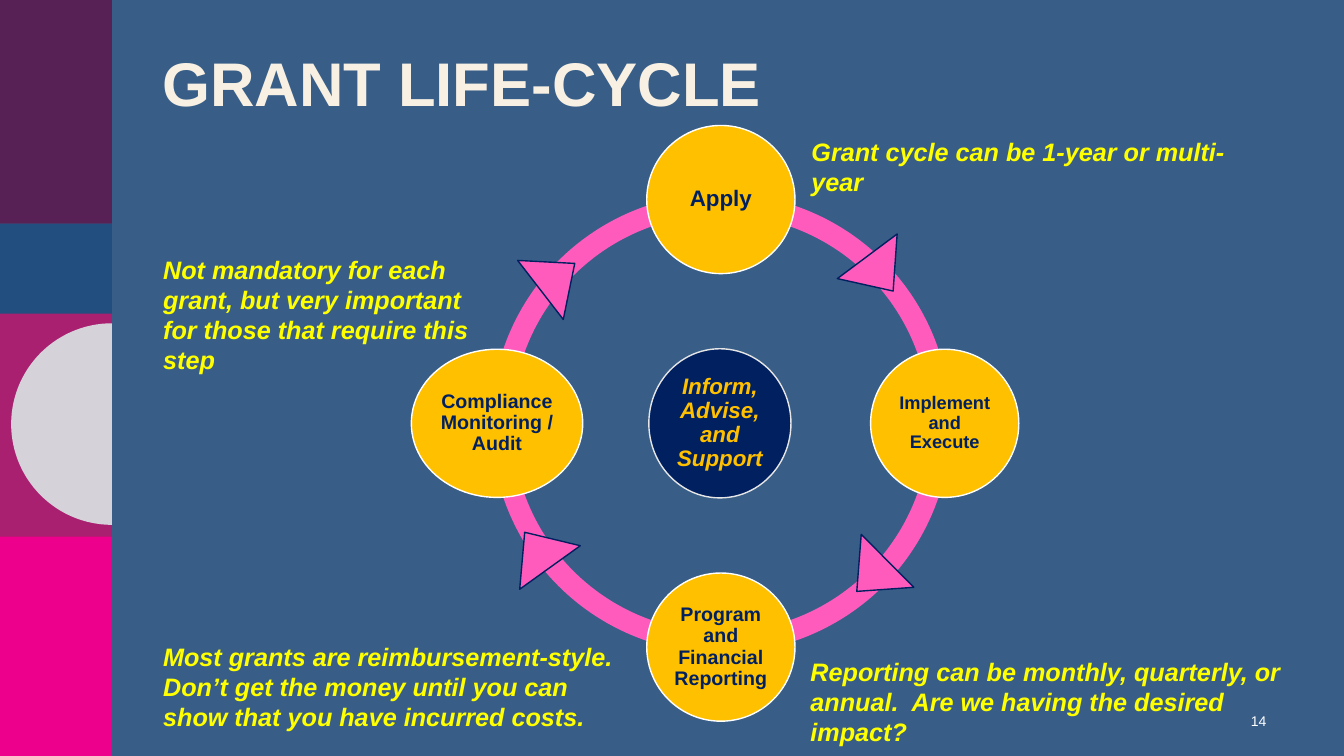
import math

from pptx import Presentation, util as u
from pptx.dml.color import RGBColor
from pptx.enum import shapes, text

SLATE = RGBColor(0x38, 0x5E, 0x88)
MAGENTA = RGBColor(0xEC, 0x00, 0x8C)
BERRY = RGBColor(0xAA, 0x20, 0x70)
PLUM = RGBColor(0x58, 0x21, 0x56)
BLUE = RGBColor(0x22, 0x4E, 0x7F)
SILVER = RGBColor(0xD5, 0xD2, 0xDA)
CREAM = RGBColor(0xF8, 0xF0, 0xE3)
PINK = RGBColor(0xFF, 0x5B, 0xBC)
NAVY = RGBColor(0x00, 0x20, 0x60)
GOLD = RGBColor(0xFF, 0xC0, 0x00)
PALE = RGBColor(0xE7, 0xE6, 0xE6)
WHITE = RGBColor(0xFF, 0xFF, 0xFF)
YELLOW = RGBColor(0xFF, 0xFF, 0x00)

WIDTH, HEIGHT = 13.33, 7.5
SIDEBAR = (0, 0, WIDTH / 12, HEIGHT)
RING = (4.87, 1.92, 4.56, 4.56)
NODE_ORBIT = 2.22
NODE_HEIGHT = 1.47
QUARTER_TURN = 54

STAGES = [
    ("Apply", 16, 1.47),
    ("Implement and Execute", 13, 1.47),
    ("Program and Financial Reporting", 14, 1.47),
    ("Compliance Monitoring / Audit", 14, 1.7),
]
ARROWS = [
    (8.36, 2.5, 143.3),
    (8.28, 5.5, 225.2),
    (4.96, 5.24, 324.3),
    (5.16, 2.53, 52.3),
]
NOTES = [
    ((7.95, 1.3, 4.73, 0.4), "Grant cycle can be 1-year or multi-year"),
    ((7.94, 6.46, 5.16, 0.71),
     "Reporting can be monthly, quarterly, or annual.  Are we having the desired impact?"),
    ((1.52, 6.31, 4.73, 1.01),
     "Most grants are reimbursement-style.  Don’t get the money until you can "
     "show that you have incurred costs."),
    ((1.52, 2.47, 3.23, 1.31),
     "Not mandatory for each grant, but very important for those that require this step"),
]


def inches(box):
    """Convert a box in inches to lengths."""
    return [u.Inches(length) for length in box]


def paint(shape, fill, line=None):
    """Give a shape a flat fill and an optional thin outline."""
    shape.shadow.inherit = False
    shape.fill.solid()
    shape.fill.fore_color.rgb = fill
    if line is None:
        shape.line.fill.background()
    else:
        shape.line.color.rgb = line
        shape.line.width = u.Pt(1)


def add_shape(page, kind, box, fill, line=None):
    """Add a painted preset shape."""
    shape = page.shapes.add_shape(kind, *inches(box))
    paint(shape, fill, line)
    return shape


def write(shape, words, size, color, bold=True, italic=False,
          align=text.PP_ALIGN.LEFT, spacing=1.0):
    """Put one formatted paragraph into a shape."""
    frame = shape.text_frame
    frame.word_wrap = True
    frame.text = words
    para = frame.paragraphs[0]
    para.alignment = align
    para.line_spacing = spacing
    for span in para.runs:
        span.font.name = "Arial"
        span.font.size = u.Pt(size)
        span.font.bold = bold
        span.font.italic = italic
        span.font.color.rgb = color
    return frame


def add_sidebar(page, box):
    """Stack the colour blocks and set a half disc against their right edge."""
    left, top, width, height = box
    bands = [(0.704, 0.296, MAGENTA), (0.414, 0.296, BERRY),
             (0, 0.296, PLUM), (0.296, 0.119, BLUE)]
    for start, share, color in bands:
        band = (left, top + start * height, width, share * height)
        add_shape(page, shapes.MSO_SHAPE.RECTANGLE, band, color)

    edge, middle, radius = left + width, top + 0.561 * height, 1
    angles = [math.radians(90 + 3 * step) for step in range(61)]
    points = [(u.Inches(edge + radius * math.cos(angle)),
               u.Inches(middle - radius * math.sin(angle))) for angle in angles]
    builder = page.shapes.build_freeform(*points[0])
    builder.add_line_segments(points[1:], close=True)
    paint(builder.convert_to_shape(), SILVER)


def add_title(page, box):
    """Place the title placeholder."""
    title = page.shapes.title
    title.left, title.top, title.width, title.height = inches(box)
    frame = write(title, "GRANT LIFE-CYCLE", 44, CREAM, spacing=0.9)
    frame.vertical_anchor = text.MSO_ANCHOR.TOP
    frame.auto_size = text.MSO_AUTO_SIZE.NONE


def add_disc(page, center, size, fill, line, words, points, color, italic=False):
    """Add a labelled ellipse around a centre point."""
    (x, y), (width, height) = center, size
    box = (x - width / 2, y - height / 2, width, height)
    disc = add_shape(page, shapes.MSO_SHAPE.OVAL, box, fill, line)
    frame = write(disc, words, points, color, italic=italic,
                  align=text.PP_ALIGN.CENTER, spacing=0.9)
    frame.vertical_anchor = text.MSO_ANCHOR.MIDDLE
    frame.margin_left = frame.margin_right = u.Inches(0.02)
    frame.margin_top = frame.margin_bottom = u.Inches(0.02)


def add_cycle(page, box):
    """Draw the ring, its hub, the four stages and the direction arrows."""
    left, top, width, height = box
    x, y = left + width / 2, top + height / 2
    for quarter in range(4):
        arc = add_shape(page, shapes.MSO_SHAPE.BLOCK_ARC, box, PINK)
        arc.adjustments[0] = quarter * QUARTER_TURN
        arc.adjustments[1] = (quarter + 1) % 4 * QUARTER_TURN
        arc.adjustments[2] = 0.046

    add_disc(page, (x - 0.01, y), (1.41, 1.48), NAVY, PALE,
             "Inform, Advise, and Support", 16, GOLD, italic=True)
    for order, (words, points, node_width) in enumerate(STAGES):
        angle = order * math.pi / 2
        center = (x + NODE_ORBIT * math.sin(angle), y - NODE_ORBIT * math.cos(angle))
        add_disc(page, center, (node_width, NODE_HEIGHT), GOLD, WHITE,
                 words, points, NAVY)

    for arrow_left, arrow_top, turn in ARROWS:
        arrow = add_shape(page, shapes.MSO_SHAPE.ISOSCELES_TRIANGLE,
                          (arrow_left, arrow_top, 0.74, 0.43), PINK, NAVY)
        arrow.rotation = turn


def add_note(page, box, words):
    """Add a yellow remark beside the cycle."""
    note = page.shapes.add_textbox(*inches(box))
    frame = write(note, words, 18, YELLOW, italic=True)
    frame.auto_size = text.MSO_AUTO_SIZE.SHAPE_TO_FIT_TEXT


def add_page_number(page, box):
    """Add the page number at the lower right."""
    number = page.shapes.add_textbox(*inches(box))
    frame = write(number, "14", 10, WHITE, bold=False, align=text.PP_ALIGN.RIGHT)
    frame.vertical_anchor = text.MSO_ANCHOR.MIDDLE


def main():
    """Build and save the deck."""
    deck = Presentation()
    deck.slide_width, deck.slide_height = u.Inches(WIDTH), u.Inches(HEIGHT)
    page = deck.slides.add_slide(deck.slide_layouts[5])
    page.background.fill.solid()
    page.background.fill.fore_color.rgb = SLATE
    add_sidebar(page, SIDEBAR)
    add_title(page, (1.51, 0.48, 10.79, 1.49))
    add_page_number(page, (12.16, 6.95, 0.5, 0.4))
    add_cycle(page, RING)
    for box, words in NOTES:
        add_note(page, box, words)
    deck.save("out.pptx")


if __name__ == "__main__":
    main()
